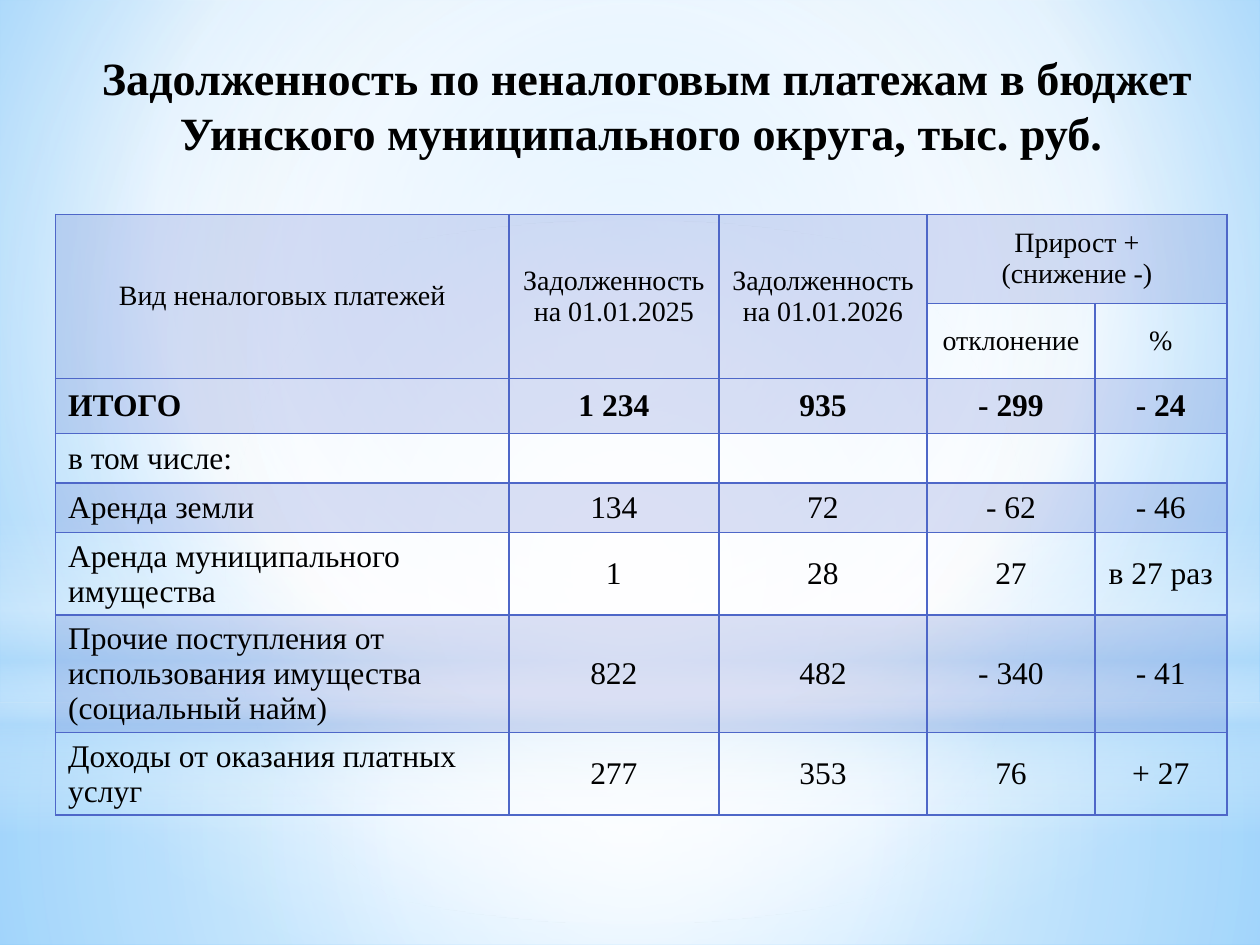
from lxml.etree import SubElement
from pptx import Presentation
from pptx.dml.color import RGBColor
from pptx.enum.shapes import MSO_SHAPE as Shape
from pptx.enum.text import MSO_ANCHOR as Anchor, MSO_AUTO_SIZE as AutoSize, PP_ALIGN as Align
from pptx.oxml.ns import qn
from pptx.util import Cm, Pt

BLACK = RGBColor(0x00, 0x00, 0x00)
WHITE = RGBColor(0xFF, 0xFF, 0xFF)
INDIGO = RGBColor(0x4E, 0x67, 0xC8)
PALE_BLUE = RGBColor(0xB4, 0xDC, 0xFA)
SKY = RGBColor(0x9E, 0xD5, 0xFF)
DEEP_SKY = RGBColor(0x5B, 0xB9, 0xFF)
CENTER_FOCUS = (50, 50, 50, 50)


def add_color(parent, color, opacity=100):
    node = SubElement(parent, qn("a:srgbClr"), val=str(color))
    if opacity < 100:
        SubElement(node, qn("a:alpha"), val=str(opacity * 1000))


def set_gradient(props, stops, focus=None):
    """Turn the solid fill in props into a circular or, without focus, vertical gradient."""
    solid = props.find(qn("a:solidFill"))
    gradient = props.makeelement(qn("a:gradFill"), {"rotWithShape": "1"})
    props.replace(solid, gradient)
    stop_list = SubElement(gradient, qn("a:gsLst"))
    for position, *color in stops:
        add_color(SubElement(stop_list, qn("a:gs"), pos=str(position * 1000)), *color)
    if focus:
        circle = SubElement(gradient, qn("a:path"), path="circle")
        sides = {side: str(value * 1000) for side, value in zip("ltrb", focus)}
        SubElement(circle, qn("a:fillToRect"), sides)
    else:
        SubElement(gradient, qn("a:lin"), ang="5400000", scaled="0")


class SlideBuilder:
    font_name = "Times New Roman"

    def __init__(self, slide):
        self.slide = slide

    def style(self, frame, size, bold=False, align=Align.CENTER):
        for paragraph in frame.paragraphs:
            paragraph.alignment = align
            font = paragraph.font
            font.name, font.size, font.bold = self.font_name, Pt(size), bold
            font.color.rgb = BLACK

    def background(self, stops, focus):
        self.slide.background.fill.solid()
        set_gradient(self.slide.element.find(".//" + qn("p:bgPr")), stops, focus)

    def glow(self, kind, top, height, stops, focus=None):
        shape = self.slide.shapes.add_shape(kind, 0, Cm(top), Cm(25.4), Cm(height))
        shape.shadow.inherit = False
        shape.line.fill.background()
        shape.fill.solid()
        set_gradient(shape.element.spPr, stops, focus)

    def title(self, text, left, top, width, height, size):
        title = self.slide.shapes.title
        title.left, title.top, title.width, title.height = map(Cm, (left, top, width, height))
        frame = title.text_frame
        frame.text = text
        frame.word_wrap = True
        frame.auto_size = AutoSize.NONE
        frame.vertical_anchor = Anchor.MIDDLE
        self.style(frame, size, bold=True)
        # Keep the title in front of the backdrop
        self.slide.shapes.element.append(title.element)

    def table(self, left, top, widths, heights):
        table = self.slide.shapes.add_table(
            len(heights), len(widths), Cm(left), Cm(top), Cm(sum(widths)), Cm(sum(heights))
        ).table
        for column, width in zip(table.columns, widths):
            column.width = Cm(width)
        for row, height in zip(table.rows, heights):
            row.height = Cm(height)
        return table

    def cell(self, cell, text, size, bold=False, align=Align.CENTER, tinted=False):
        cell.text = text
        cell.vertical_anchor = Anchor.MIDDLE
        self.style(cell.text_frame, size, bold, align)
        props = cell._tc.get_or_add_tcPr()
        for edge in ("lnL", "lnR", "lnT", "lnB"):
            line = SubElement(props, qn("a:" + edge), w=str(Pt(1)))
            add_color(SubElement(line, qn("a:solidFill")), INDIGO)
        if tinted:
            cell.fill.solid()
            solid = props.find(qn("a:solidFill"))
            solid.clear()
            add_color(solid, INDIGO, 20)
        else:
            cell.fill.background()


HEADER = [
    ["Вид неналоговых платежей", "Задолженность на 01.01.2025", "Задолженность на 01.01.2026",
     "Прирост +\n(снижение -)", ""],
    ["", "", "", "отклонение", "%"],
]
DEBTS = [
    ["ИТОГО", "1 234", "935", "- 299", "- 24"],
    ["в том числе:", "", "", "", ""],
    ["Аренда земли", "134", "72", "- 62", "- 46"],
    ["Аренда муниципального имущества", "1", "28", "27", "в 27 раз"],
    ["Прочие поступления от использования имущества (социальный найм)",
     "822", "482", "- 340", "- 41"],
    ["Доходы от оказания платных услуг", "277", "353", "76", "+ 27"],
]


def main():
    prs = Presentation()
    prs.slide_width, prs.slide_height = Cm(25.4), Cm(19.05)
    builder = SlideBuilder(prs.slides.add_slide(prs.slide_layouts[5]))

    # Backdrop of soft light
    builder.background([(0, SKY), (60, WHITE), (100, DEEP_SKY)], (20, 10, 20, 60))
    builder.glow(Shape.RECTANGLE, 14.17, 4.88,
                 [(0, WHITE, 91), (37, WHITE, 76), (100, PALE_BLUE, 79)], CENTER_FOCUS)
    builder.glow(Shape.RECTANGLE, 0, 14.17,
                 [(0, WHITE, 89), (48, WHITE, 62), (100, PALE_BLUE, 79)], CENTER_FOCUS)
    builder.glow(Shape.RECTANGLE, 10.46, 6.35,
                 [(0, WHITE, 0), (29, WHITE, 30), (45, PALE_BLUE, 40), (55, WHITE, 26),
                  (65, PALE_BLUE, 60), (100, WHITE, 0)])
    builder.glow(Shape.OVAL, 4.45, 14.17, [(0, WHITE), (56, WHITE, 0)], CENTER_FOCUS)

    # Debt table
    table = builder.table(1.12, 4.32, [9.14, 4.23, 4.2, 3.38, 2.66],
                          [1.8, 1.5, 1.11, 1, 1, 1.65, 2.37, 1.65])
    for r, row in enumerate(HEADER):
        for c, text in enumerate(row):
            builder.cell(table.cell(r, c), text, 16, tinted=r == 0)
    for r, row in enumerate(DEBTS):
        for c, text in enumerate(row):
            builder.cell(table.cell(r + len(HEADER), c), text, 18, bold=r == 0,
                         align=Align.CENTER if c else Align.LEFT, tinted=r % 2 == 0)
    for c in range(3):
        table.cell(0, c).merge(table.cell(1, c))
    table.cell(0, 3).merge(table.cell(0, 4))

    # Title
    builder.title(" Задолженность по неналоговым платежам в бюджет "
                  "Уинского муниципального округа, тыс. руб.", 1.5, 0.91, 22.86, 2.39, 26.4)

    prs.save("out.pptx")


if __name__ == "__main__":
    main()
